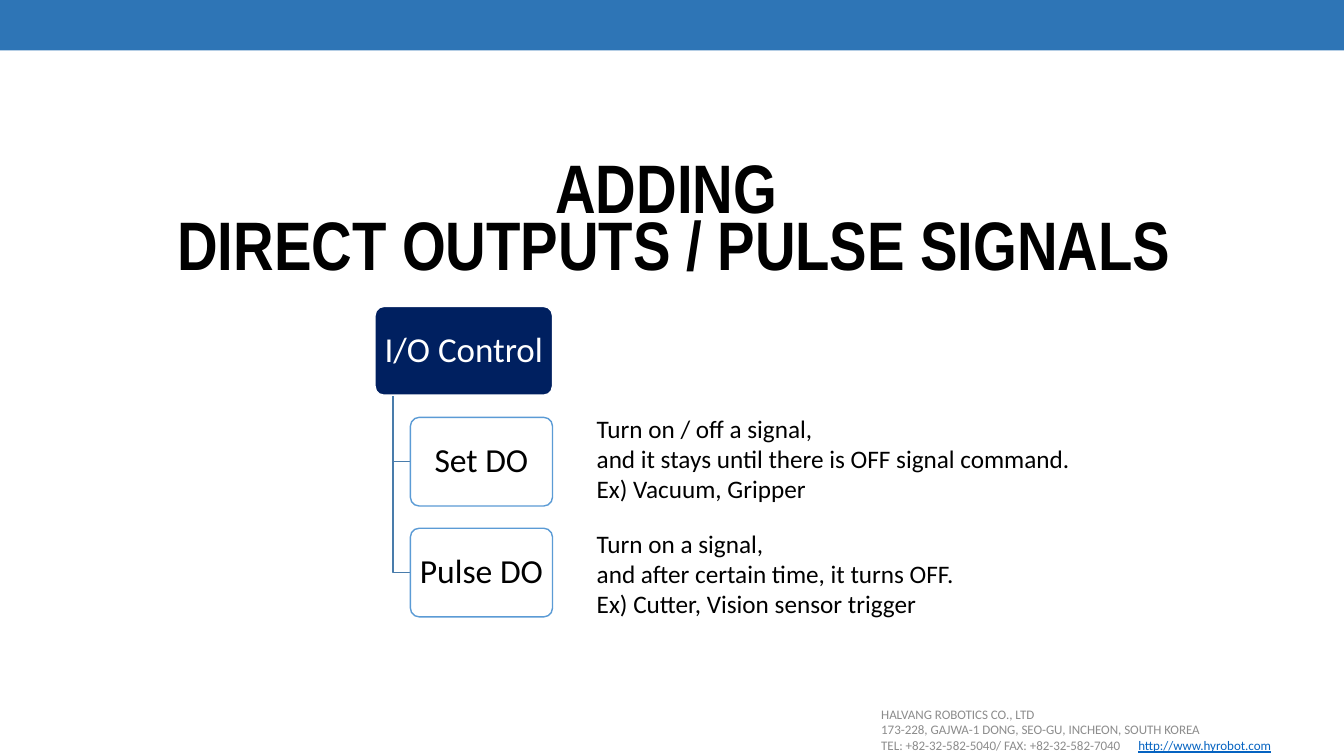
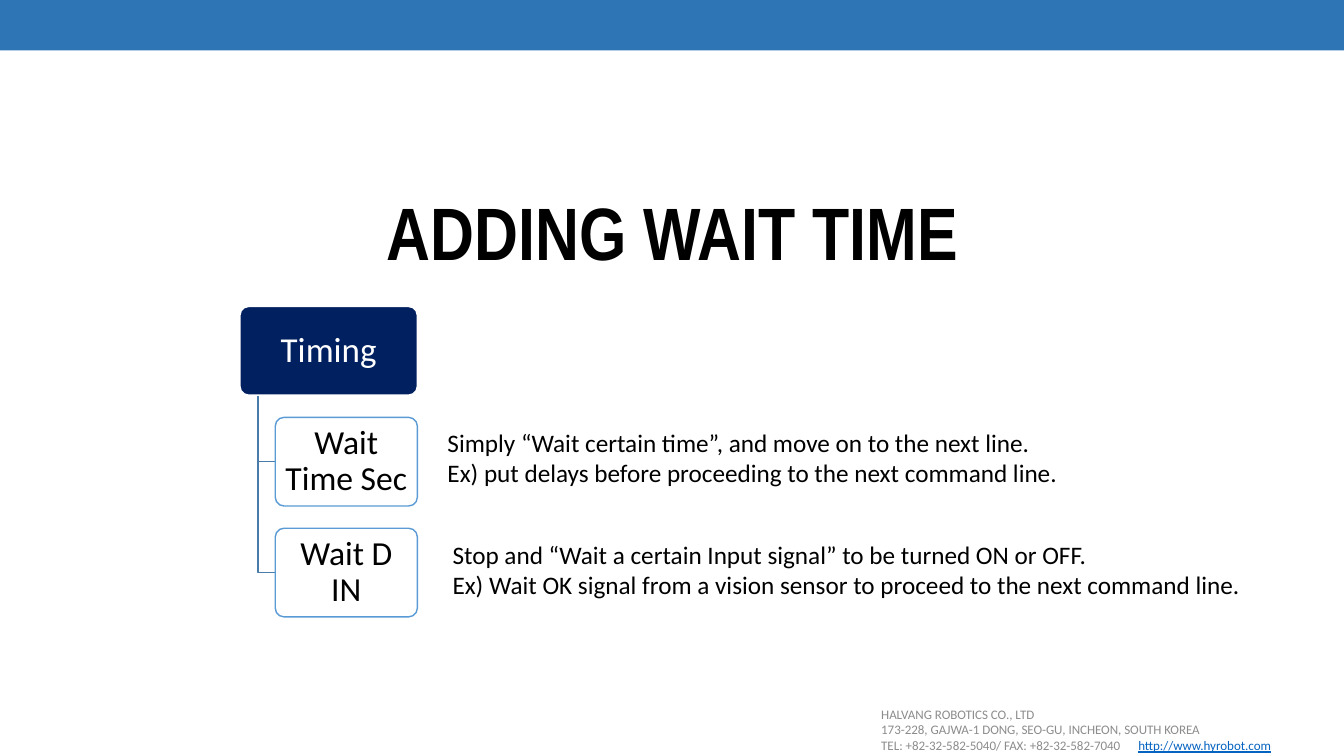
"""Build two slides that explain output signals and wait times."""
import pptx
import pptx.dml.color
import pptx.enum.shapes
import pptx.enum.text
import pptx.oxml
import pptx.oxml.ns
import pptx.util

Inches = pptx.util.Inches
Colour = pptx.dml.color.RGBColor.from_string
Shape = pptx.enum.shapes.MSO_SHAPE
Align = pptx.enum.text.PP_ALIGN
Anchor = pptx.enum.text.MSO_ANCHOR


class Theme:
    band = Colour("2E75B6")
    navy = Colour("002060")
    outline = Colour("5B9BD5")
    branch = Colour("497CAB")
    white = Colour("FFFFFF")
    black = Colour("000000")
    grey = Colour("8C8C8C")
    link = Colour("0563C1")
    title_font = "Arial Narrow"
    body_font = "Calibri"
    root_size = 25
    child_size = 24
    caption_size = 18
    footer_size = 9.3


def write(frame, lines, size, colour, font=Theme.body_font, bold=False, align=Align.LEFT,
          spacing=1.0, margins=(0.1, 0.05), anchor=Anchor.MIDDLE):
    frame.word_wrap = True
    frame.auto_size = pptx.enum.text.MSO_AUTO_SIZE.NONE
    frame.vertical_anchor = anchor
    frame.margin_left = frame.margin_right = Inches(margins[0])
    frame.margin_top = frame.margin_bottom = Inches(margins[1])
    for index, line in enumerate(lines):
        para = frame.paragraphs[0] if index == 0 else frame.add_paragraph()
        para.alignment = align
        para.line_spacing = spacing
        para.space_before = pptx.util.Pt(0)
        span = para.add_run()
        span.text = line
        span.font.name = font
        span.font.size = pptx.util.Pt(size)
        span.font.bold = bold
        span.font.color.rgb = colour


def add_block(page, kind, place, fill, line):
    block = page.shapes.add_shape(kind, *map(Inches, place))
    block.shadow.inherit = False
    block.fill.solid()
    block.fill.fore_color.rgb = fill
    block.line.color.rgb = line
    block.line.width = pptx.util.Pt(1)
    return block


slides = [
    {
        "title": ["ADDING ", "DIRECT OUTPUTS / PULSE SIGNALS"],
        "title_place": (0.49, 1.55, 12.39, 1.36),
        "title_size": 49,
        "title_spacing": 0.7,
        "left": 3.72,
        "root": "I/O Control",
        "children": [
            ("Set DO", (5.82, 4.05, 5.5, 1.01),
             ["Turn on / off a signal,",
              "and it stays until there is OFF signal command.",
              "Ex) Vacuum, Gripper"]),
            ("Pulse DO", (5.82, 5.19, 5.05, 1.01),
             ["Turn on a signal,",
              "and after certain time, it turns OFF.",
              "Ex) Cutter, Vision sensor trigger"]),
        ],
    },
    {
        "title": ["ADDING WAIT TIME"],
        "title_place": (1.55, 1.67, 10.24, 1.36),
        "title_size": 53,
        "title_spacing": 0.9,
        "left": 2.38,
        "root": "Timing",
        "children": [
            ("Wait Time Sec", (4.34, 4.19, 6.46, 0.71),
             ["Simply “Wait certain time”, and move on to the next line.",
              "Ex) put delays before proceeding to the next command line."]),
            ("Wait D IN", (4.39, 5.3, 8.47, 0.71),
             ["Stop and “Wait a certain Input signal” to be turned ON or OFF.",
              "Ex) Wait OK signal from a vision sensor to proceed to the next command line."]),
        ],
    },
]

root_top, root_width, node_height = 3.04, 1.76, 0.88
child_width, child_pitch = 1.41, 1.1
trunk_indent, child_indent = 0.18, 0.35
root_bottom = root_top + node_height

deck = pptx.Presentation()
deck.slide_width = Inches(13.33)
deck.slide_height = Inches(7.5)
layout = deck.slide_layouts[5]
for holder in list(layout.placeholders):
    if holder.placeholder_format.type != pptx.enum.shapes.PP_PLACEHOLDER.TITLE:
        layout.shapes.element.remove(holder.element)

pages = [deck.slides.add_slide(layout) for slide in slides]

band = add_block(pages[0], Shape.RECTANGLE, (0, 0, 13.33, 0.5), Theme.band, Theme.band)
band.line.fill.background()
footer = pages[0].shapes.add_textbox(*map(Inches, (8.61, 7.04, 4.72, 0.4)))
write(footer.text_frame,
      ["HALVANG ROBOTICS CO., LTD",
       "173-228, GAJWA-1 DONG, SEO-GU, INCHEON, SOUTH KOREA",
       "TEL: +82-32-582-5040/ FAX: +82-32-582-7040\t"],
      Theme.footer_size, Theme.grey, margins=(0.13, 0.07))
contact = footer.text_frame.paragraphs[-1]
contact._p.get_or_add_pPr().append(pptx.oxml.parse_xml(
    f'<a:tabLst {pptx.oxml.ns.nsdecls("a")}><a:tab pos="{Inches(2.55)}" algn="l"/></a:tabLst>'))
address = contact.add_run()
address.text = "http://www.hyrobot.com"
address.font.name = Theme.body_font
address.font.size = pptx.util.Pt(Theme.footer_size)
address.font.color.rgb = Theme.link
address.font.underline = True
for shared in (band, footer):
    layout.shapes.element.append(shared.element)

for page, slide in zip(pages, slides):
    title = page.shapes.title
    title.left, title.top, title.width, title.height = map(Inches, slide["title_place"])
    write(title.text_frame, slide["title"], slide["title_size"], Theme.black,
          Theme.title_font, True, Align.CENTER, slide["title_spacing"])

    left = slide["left"]
    trunk_left, child_left = left + trunk_indent, left + child_indent
    nodes = [(slide["root"], (left, root_top, root_width, node_height),
              Theme.navy, Theme.white, Theme.white, Theme.root_size)]
    for index, (label, caption_place, caption) in enumerate(slide["children"], start=1):
        child_top = root_top + index * child_pitch
        child_middle = child_top + node_height / 2
        nodes.append((label, (child_left, child_top, child_width, node_height),
                      Theme.white, Theme.outline, Theme.black, Theme.child_size))

        builder = page.shapes.build_freeform(Inches(trunk_left), Inches(root_bottom))
        builder.add_line_segments(
            [(Inches(trunk_left), Inches(child_middle)),
             (Inches(child_left), Inches(child_middle))], close=False)
        branch = builder.convert_to_shape()
        branch.shadow.inherit = False
        branch.fill.background()
        branch.line.color.rgb = Theme.branch
        branch.line.width = pptx.util.Pt(1)

        box = page.shapes.add_textbox(*map(Inches, caption_place))
        write(box.text_frame, caption, Theme.caption_size, Theme.black, anchor=Anchor.TOP)

    for label, place, fill, line, colour, size in nodes:
        node = add_block(page, Shape.ROUNDED_RECTANGLE, place, fill, line)
        node.adjustments[0] = 0.1
        write(node.text_frame, [label], size, colour, align=Align.CENTER,
              spacing=0.9, margins=(0.05, 0.03))

deck.save("out.pptx")
